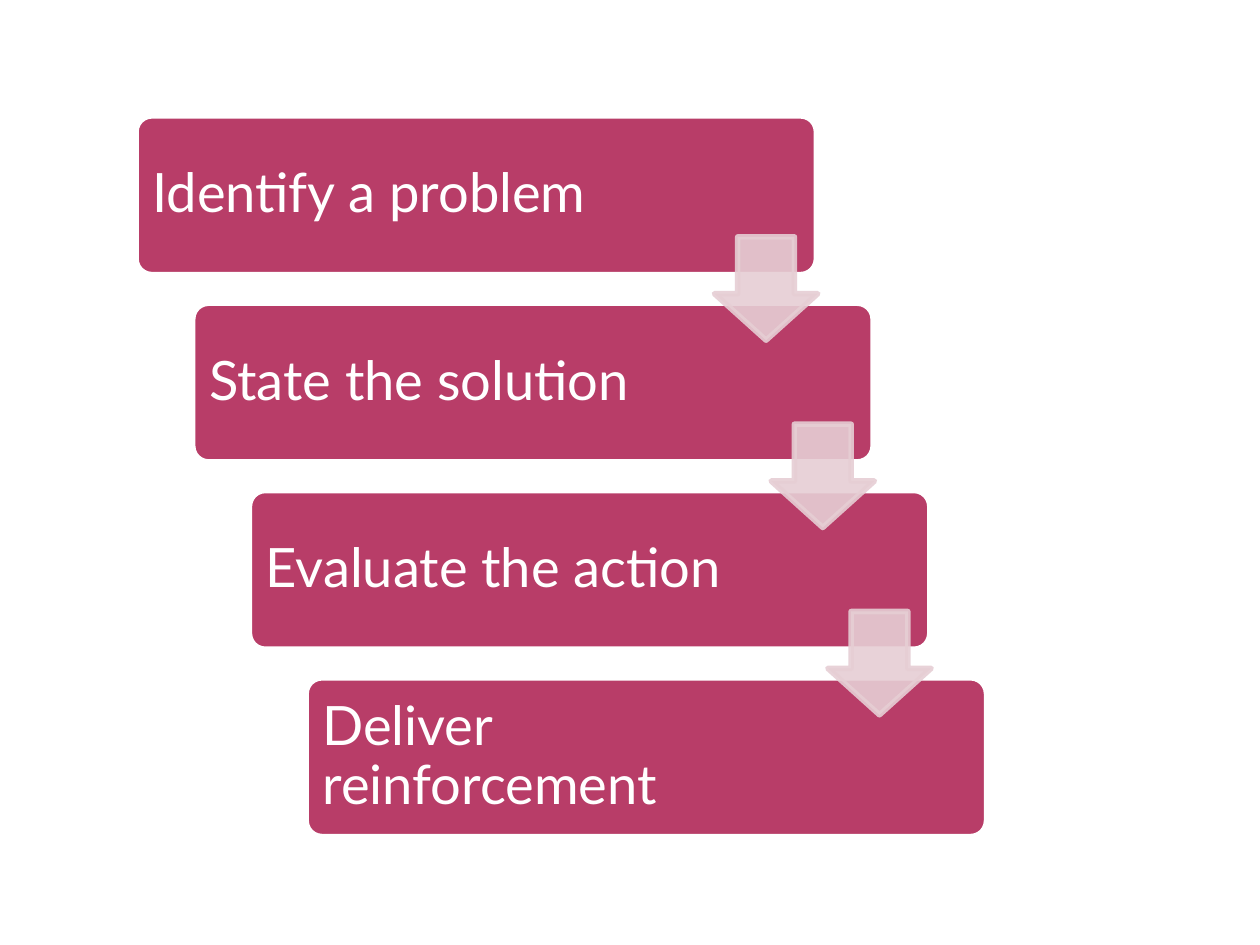
from lxml import etree
from pptx import Presentation
from pptx.dml.color import RGBColor
from pptx.enum.shapes import MSO_SHAPE
from pptx.enum.text import MSO_ANCHOR, PP_ALIGN
from pptx.oxml.ns import qn
from pptx.util import Inches, Pt

ROUNDED = MSO_SHAPE.ROUNDED_RECTANGLE
DOWN_ARROW = MSO_SHAPE.DOWN_ARROW
MIDDLE = MSO_ANCHOR.MIDDLE
LEFT = PP_ALIGN.LEFT

WHITE = RGBColor(0xFF, 0xFF, 0xFF)
RASPBERRY = RGBColor(0xB8, 0x3D, 0x68)
PALE_PINK = RGBColor(0xE6, 0xCE, 0xD4)

STEPS = ["Identify a problem", "State the solution",
         "Evaluate the action", "Deliver reinforcement"]

# Staircase grid, in inches
FIRST_LEFT, FIRST_TOP = 1.08, 0.92
STEP_RIGHT, STEP_DOWN = 0.45, 4.46 / 3
BAR_WIDTH, BAR_HEIGHT = 5.4, 1.26
LABEL_WIDTHS = [4.01, 4.13, 4.14, 4.13]
ARROW_SIZE = 0.82
ARROW_RIGHT, ARROW_DOWN = 4.59, 0.96  # from the corner of its bar

prs = Presentation()
prs.slide_width, prs.slide_height = Inches(10), Inches(7.5)
slide = prs.slides.add_slide(prs.slide_layouts[6])


def add_block(preset, left, top, width, height, fill, line, adjustments):
    block = slide.shapes.add_shape(
        preset, Inches(left), Inches(top), Inches(width), Inches(height))
    block.shadow.inherit = False
    block.fill.solid()
    block.fill.fore_color.rgb = fill
    block.line.color.rgb = line
    block.line.width = Pt(3.15)
    for index, value in enumerate(adjustments):
        block.adjustments[index] = value
    return block


corners = [(FIRST_LEFT + i * STEP_RIGHT, FIRST_TOP + i * STEP_DOWN)
           for i in range(len(STEPS))]

# Step bars with their labels
for step, label_width, (left, top) in zip(STEPS, LABEL_WIDTHS, corners):
    add_block(ROUNDED, left, top, BAR_WIDTH, BAR_HEIGHT, RASPBERRY, WHITE, [0.1])

    label = slide.shapes.add_textbox(
        Inches(left), Inches(top), Inches(label_width), Inches(BAR_HEIGHT))
    frame = label.text_frame
    frame.word_wrap = True
    frame.vertical_anchor = MIDDLE
    frame.margin_left = frame.margin_right = Inches(0.13)
    frame.margin_top = frame.margin_bottom = Inches(0.13)
    paragraph = frame.paragraphs[0]
    paragraph.alignment = LEFT
    paragraph.line_spacing = 0.9
    run = paragraph.add_run()
    run.text = step
    run.font.name = "Lato"
    run.font.size = Pt(31)
    run.font.color.rgb = WHITE

# Translucent arrows from each step to the next
for left, top in corners[:-1]:
    arrow = add_block(DOWN_ARROW, left + ARROW_RIGHT, top + ARROW_DOWN,
                      ARROW_SIZE, ARROW_SIZE, PALE_PINK, PALE_PINK, [0.55, 0.45])
    for color in arrow.element.spPr.iter(qn("a:srgbClr")):
        etree.SubElement(color, qn("a:alpha"), val="90000")

prs.save("out.pptx")
